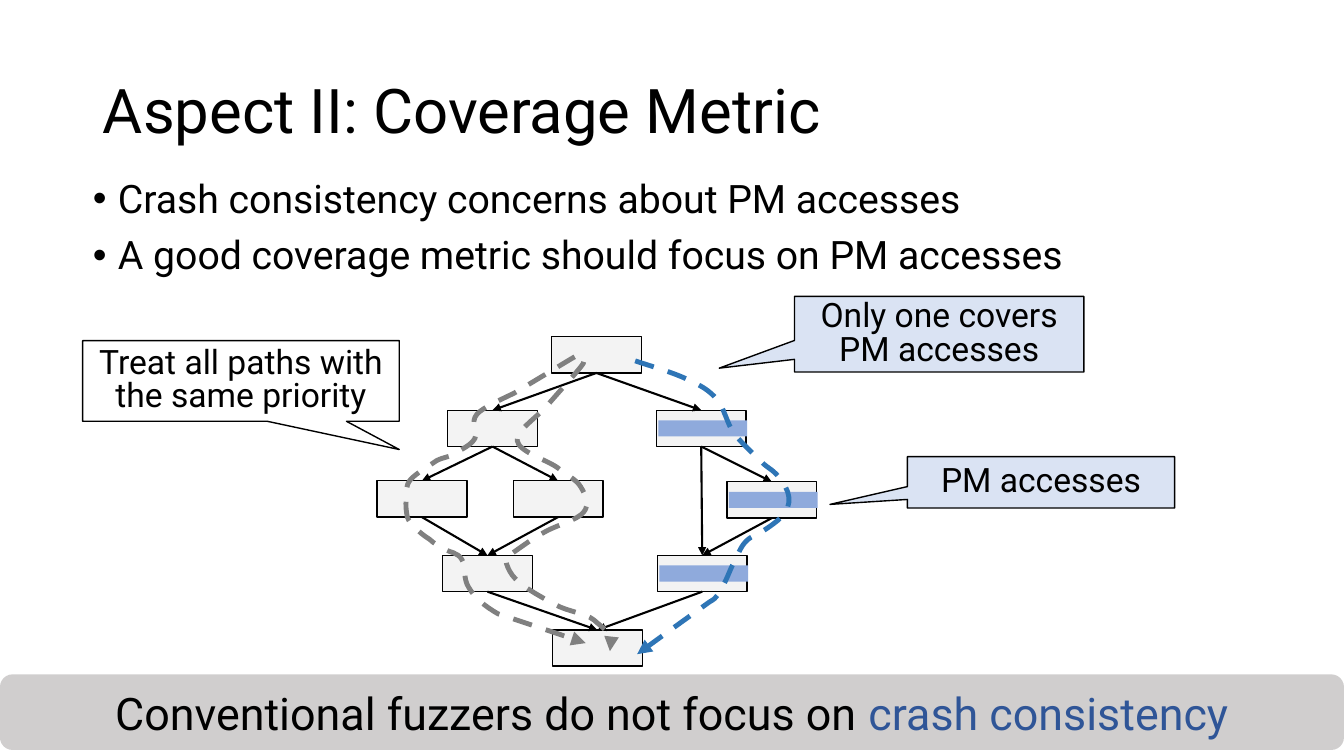
from lxml.etree import SubElement
from pptx import Presentation
from pptx.dml.color import RGBColor
from pptx.enum.dml import MSO_LINE
from pptx.enum.shapes import MSO_CONNECTOR, MSO_SHAPE
from pptx.enum.text import MSO_ANCHOR, MSO_AUTO_SIZE, PP_ALIGN
from pptx.oxml.ns import qn
from pptx.util import Inches, Pt

BLACK = RGBColor(0x00, 0x00, 0x00)
WHITE = RGBColor(0xFF, 0xFF, 0xFF)
NODE_GRAY = RGBColor(0xF3, 0xF3, 0xF3)
PATH_GRAY = RGBColor(0x80, 0x80, 0x80)
BANNER_GRAY = RGBColor(0xD0, 0xCE, 0xCE)
PALE_BLUE = RGBColor(0xDA, 0xE3, 0xF3)
ACCESS_BLUE = RGBColor(0x8F, 0xAA, 0xDC)
PATH_BLUE = RGBColor(0x2E, 0x75, 0xB6)
TEXT_BLUE = RGBColor(0x2F, 0x55, 0x97)

NODE_WIDTH, NODE_HEIGHT = 0.89, 0.36

deck = Presentation()
deck.slide_width, deck.slide_height = Inches(13.33), Inches(7.5)
page = deck.slides.add_slide(deck.slide_layouts[1])
shapes = page.shapes


def add_box(kind, place, fill, line_width=None):
    """Add a preset shape; without a line width it has no outline."""
    box = shapes.add_shape(kind, *map(Inches, place))
    box.shadow.inherit = False
    box.fill.solid()
    box.fill.fore_color.rgb = fill
    if line_width:
        box.line.color.rgb = BLACK
        box.line.width = Pt(line_width)
    else:
        box.line.fill.background()
    return box


def add_text(para, text, size, color=BLACK):
    span = para.add_run()
    span.text = text
    for name, value in {"name": "Roboto", "size": Pt(size)}.items():
        setattr(span.font, name, value)
    span.font.color.rgb = color


# Title and bullets
placeholders = [
    (shapes.title, (0.92, 0.4, 11.5, 1.45), 44, MSO_ANCHOR.MIDDLE,
     ["Aspect II: Coverage Metric"]),
    (page.placeholders[1], (0.82, 1.73, 11.5, 1.18), 28, MSO_ANCHOR.TOP,
     ["Crash consistency concerns about PM accesses",
      "A good coverage metric should focus on PM accesses"]),
]
for box, place, size, anchor, lines in placeholders:
    box.left, box.top, box.width, box.height = map(Inches, place)
    frame = box.text_frame
    frame.auto_size = MSO_AUTO_SIZE.NONE
    frame.vertical_anchor = anchor
    for index, line in enumerate(lines):
        para = frame.add_paragraph() if index else frame.paragraphs[0]
        para.alignment = PP_ALIGN.LEFT
        para.line_spacing = 0.9
        add_text(para, line, size)

for para in page.placeholders[1].text_frame.paragraphs:
    para.space_before = Pt(10)
    properties = para._p.get_or_add_pPr()
    properties.set("marL", str(Inches(0.25)))
    properties.set("indent", str(Inches(-0.25)))
    SubElement(properties, qn("a:buFont"), typeface="Arial")
    SubElement(properties, qn("a:buChar"), char="•")

# Control flow graph
node_places = {
    "entry": (5.47, 3.34),
    "left": (4.44, 4.07), "right": (6.51, 4.07),
    "left outer": (3.74, 4.77), "left inner": (5.09, 4.77),
    "right outer": (7.21, 4.78),
    "left join": (4.39, 5.51), "right join": (6.52, 5.51),
    "exit": (5.48, 6.25),
}
edges = [
    ("entry", "left"), ("entry", "right"),
    ("left", "left outer"), ("left", "left inner"),
    ("left outer", "left join"), ("left inner", "left join"),
    ("right", "right outer"), ("right", "right join"),
    ("right outer", "right join"),
    ("left join", "exit"), ("right join", "exit"),
]
nodes = {
    name: add_box(MSO_SHAPE.RECTANGLE, (*place, NODE_WIDTH, NODE_HEIGHT), NODE_GRAY, 1)
    for name, place in node_places.items()
}
for source, target in edges:
    arrow = shapes.add_connector(MSO_CONNECTOR.STRAIGHT, 0, 0, 0, 0)
    arrow.begin_connect(nodes[source], 2)
    arrow.end_connect(nodes[target], 0)
    arrow.line.color.rgb = BLACK
    arrow.line.width = Pt(1.5)
    SubElement(arrow.line._get_or_add_ln(), qn("a:tailEnd"), type="triangle")
    SubElement(arrow._element.spPr, qn("a:effectLst"))

for name in ("right", "right outer", "right join"):
    left, top = node_places[name]
    add_box(MSO_SHAPE.RECTANGLE, (left + 0.02, top + 0.1, 0.88, 0.16), ACCESS_BLUE)

# Execution paths: a row of three points is a curve, a row of one is a line
execution_paths = [
    (PATH_GRAY, (5.7, 3.54), [
        [(5.68, 3.55), (5.5, 3.66), (5.4, 3.72)],
        [(5.1, 3.9)],
        [(4.98, 3.96), (4.79, 4.04), (4.73, 4.11)],
        [(4.66, 4.19), (4.74, 4.29), (4.71, 4.35)],
        [(4.67, 4.42), (4.57, 4.46), (4.51, 4.5)],
        [(4.45, 4.54), (4.41, 4.53), (4.33, 4.57)],
        [(4.26, 4.62), (4.12, 4.7), (4.07, 4.76)],
        [(4.02, 4.82), (4.03, 4.89), (4.03, 4.95)],
        [(4.02, 5.01), (4.03, 5.08), (4.04, 5.13)],
        [(4.06, 5.18), (4.08, 5.2), (4.12, 5.24)],
        [(4.15, 5.27), (4.21, 5.32), (4.26, 5.35)],
        [(4.3, 5.39), (4.36, 5.42), (4.41, 5.45)],
        [(4.46, 5.48), (4.54, 5.48), (4.58, 5.55)],
        [(4.62, 5.61), (4.59, 5.74), (4.65, 5.83)],
        [(4.71, 5.93), (4.8, 6.01), (4.94, 6.09)],
        [(5.81, 6.38)]]),
    (PATH_GRAY, (5.79, 3.59), [
        [(5.81, 3.6), (5.55, 3.88), (5.44, 4.01)],
        [(5.33, 4.14), (5.12, 4.27), (5.13, 4.37)],
        [(5.14, 4.48), (5.42, 4.56), (5.53, 4.64)],
        [(5.63, 4.72), (5.72, 4.76), (5.76, 4.83)],
        [(5.81, 4.91), (5.85, 5.01), (5.79, 5.08)],
        [(5.73, 5.16), (5.52, 5.21), (5.4, 5.28)],
        [(5.27, 5.35), (5.21, 5.4), (5.05, 5.51)],
        [(4.98, 5.5), (5.03, 5.66), (5.11, 5.74)],
        [(5.18, 5.82), (5.38, 5.93), (5.51, 6)],
        [(5.64, 6.07), (5.8, 6.08), (5.89, 6.15)],
        [(5.98, 6.23), (6.15, 6.34), (6.05, 6.46)]]),
    (PATH_BLUE, (6.3, 3.58), [
        [(6.48, 3.64), (6.69, 3.7), (6.83, 3.77)],
        [(6.96, 3.83), (7.03, 3.87), (7.11, 3.96)],
        [(7.18, 4.04), (7.21, 4.2), (7.28, 4.3)],
        [(7.36, 4.4), (7.47, 4.5), (7.55, 4.58)],
        [(7.63, 4.66), (7.67, 4.65), (7.76, 4.78)],
        [(7.85, 4.91), (7.87, 5.05), (7.68, 5.19)],
        [(7.48, 5.34), (7.47, 5.3), (7.4, 5.37)],
        [(7.34, 5.43), (7.32, 5.51), (7.28, 5.58)],
        [(7.24, 5.65), (7.21, 5.75), (7.17, 5.81)],
        [(7.13, 5.88), (7.12, 5.93), (7.04, 5.97)],
        [(6.65, 6.25)],
        [(6.32, 6.49)]]),
]
for color, start, segments in execution_paths:
    builder = shapes.build_freeform(*map(Inches, start))
    builder.add_line_segments(
        [tuple(map(Inches, point)) for segment in segments for point in segment],
        close=False)
    trace = builder.convert_to_shape()
    outline = trace._element.find(".//" + qn("a:path"))
    steps = iter(outline.findall(qn("a:lnTo")))
    for segment in segments:
        kind = "a:cubicBezTo" if len(segment) == 3 else "a:lnTo"
        joined = SubElement(outline, qn(kind))
        for _ in segment:
            step = next(steps)
            joined.append(step[0])
            outline.remove(step)
    trace.shadow.inherit = False
    trace.fill.background()
    trace.line.color.rgb = color
    trace.line.width = Pt(3.5)
    trace.line.dash_style = MSO_LINE.DASH
    SubElement(trace.line._get_or_add_ln(), qn("a:tailEnd"), type="triangle")

# Callouts
callouts = [
    ("Treat all paths with the same priority", (0.82, 3.38, 3.14, 0.8), (0.5, 0.85), WHITE),
    ("Only one covers PM accesses", (7.88, 2.94, 2.87, 0.75), (-0.76, 0.45), PALE_BLUE),
    ("PM accesses", (9, 4.53, 2.65, 0.51), (-0.79, 0.43), PALE_BLUE),
]
for text, place, tip, fill in callouts:
    callout = add_box(MSO_SHAPE.RECTANGULAR_CALLOUT, place, fill, 1)
    callout.adjustments[0], callout.adjustments[1] = tip
    callout.text_frame.vertical_anchor = MSO_ANCHOR.MIDDLE
    para = callout.text_frame.paragraphs[0]
    para.alignment = PP_ALIGN.CENTER
    para.line_spacing = Pt(24)
    add_text(para, text, 24)

# Conclusion
banner = add_box(MSO_SHAPE.ROUNDED_RECTANGLE, (0, 6.69, 13.33, 0.75), BANNER_GRAY)
banner.text_frame.vertical_anchor = MSO_ANCHOR.MIDDLE
para = banner.text_frame.paragraphs[0]
para.alignment = PP_ALIGN.CENTER
add_text(para, "Conventional fuzzers do not focus on ", 32)
add_text(para, "crash consistency", 32, TEXT_BLUE)

deck.save("out.pptx")
